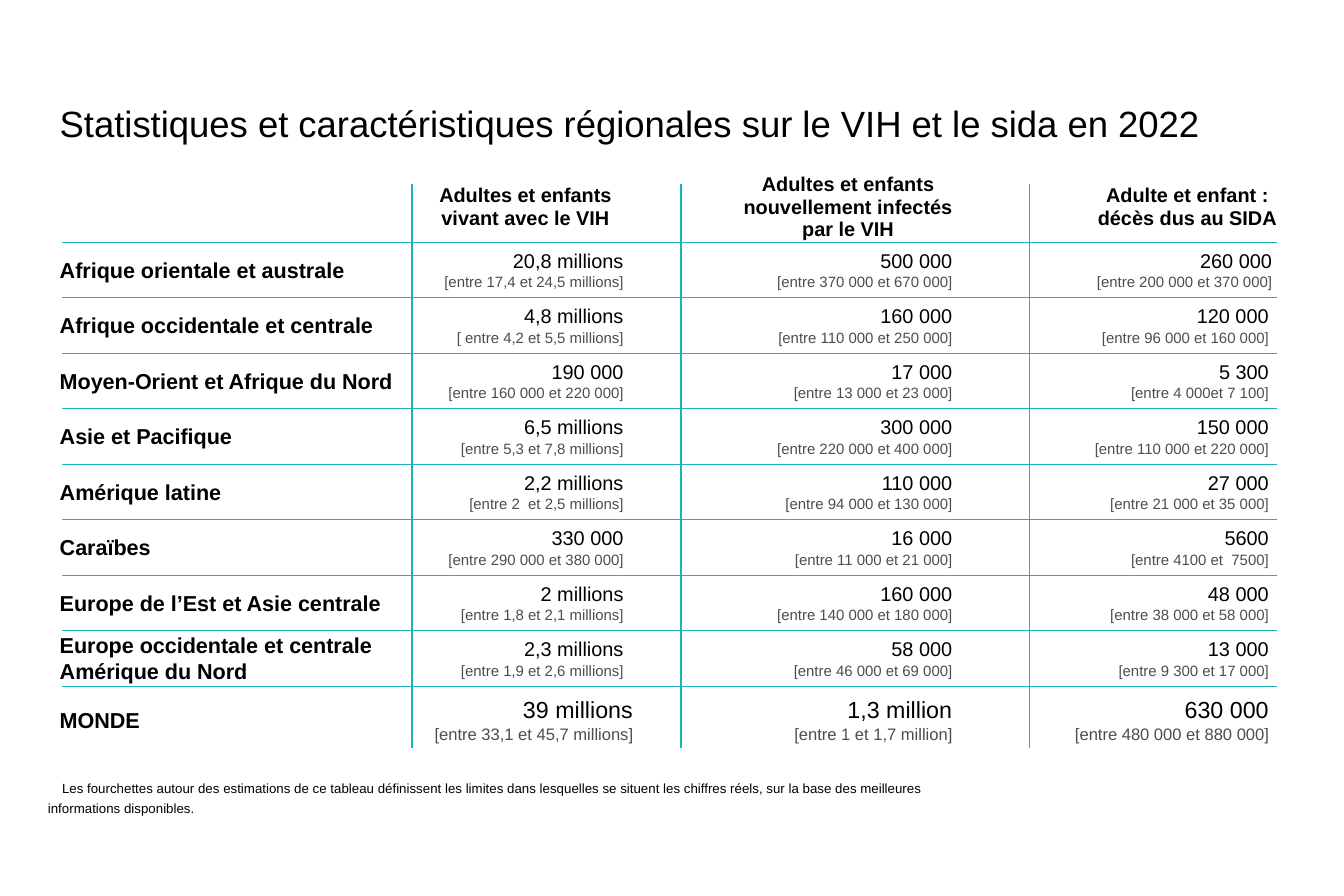
import pptx
import pptx.util
import pptx.dml.color
import pptx.enum.shapes
import pptx.enum.text
import pptx.oxml.ns
import lxml.etree

Cm, Pt = pptx.util.Cm, pptx.util.Pt
qn = pptx.oxml.ns.qn
ALIGN = pptx.enum.text.PP_ALIGN
MIDDLE = pptx.enum.text.MSO_ANCHOR.MIDDLE
STRAIGHT = pptx.enum.shapes.MSO_CONNECTOR.STRAIGHT
NO_STYLE = "{2D5ABB26-0587-4C30-8999-92F81FD0307C}"

TABLE_LEFT, TABLE_TOP = 1.27, 3.64
COLUMN_WIDTHS = [7.49, 5.72, 7.42, 5.4]
HEADER_HEIGHT, REGION_HEIGHT, WORLD_HEIGHT = 1.51, 1.18, 1.3
RULE_LEFT, RULE_RIGHT = 1.32, 27.15
RULE_TOP, RULE_BOTTOM = 3.91, 15.9
HEADER_MARGINS = [(0, 0), (0.13, 1.02), (1.14, 1.45), (1.3, 0)]
FIGURE_MARGINS = [1.22, 1.65, 0.32]
FIRST_MARGINS = [1.22, 1.65, 0.25]
WORLD_MARGINS = [1.02, 1.65, 0.32]

HEADERS = [
    "",
    "Adultes et enfants vivant avec le VIH",
    "Adultes et enfants nouvellement infectés par le VIH",
    "Adulte et enfant :\ndécès dus au SIDA",
]
REGIONS = [
    ("Afrique orientale et australe",
     "20,8 millions\n[entre 17,4 et 24,5 millions]",
     "500 000\n[entre 370 000 et 670 000]",
     "260 000\n[entre 200 000 et 370 000]"),
    ("Afrique occidentale et centrale",
     "4,8 millions\n[ entre 4,2 et 5,5 millions]",
     "160 000\n[entre 110 000 et 250 000]",
     "120 000\n[entre 96 000 et 160 000]"),
    ("Moyen-Orient et Afrique du Nord",
     "190 000\n[entre 160 000 et 220 000]",
     "17 000\n[entre 13 000 et 23 000]",
     "5 300\n[entre 4 000et 7 100]"),
    ("Asie et Pacifique",
     "6,5 millions\n[entre 5,3 et 7,8 millions]",
     "300 000\n[entre 220 000 et 400 000]",
     "150 000\n[entre 110 000 et 220 000]"),
    ("Amérique latine",
     "2,2 millions\n[entre 2  et 2,5 millions]",
     "110 000\n[entre 94 000 et 130 000]",
     "27 000\n[entre 21 000 et 35 000]"),
    ("Caraïbes",
     "330 000\n[entre 290 000 et 380 000]",
     "16 000\n[entre 11 000 et 21 000]",
     "5600\n[entre 4100 et  7500]"),
    ("Europe de l’Est et Asie centrale",
     "2 millions\n[entre 1,8 et 2,1 millions]",
     "160 000\n[entre 140 000 et 180 000]",
     "48 000\n[entre 38 000 et 58 000]"),
    ("Europe occidentale et centrale\nAmérique du Nord",
     "2,3 millions\n[entre 1,9 et 2,6 millions]",
     "58 000\n[entre 46 000 et 69 000]",
     "13 000\n[entre 9 300 et 17 000]"),
]
WORLD = ("MONDE",
         "39 millions\n[entre 33,1 et 45,7 millions]",
         "1,3 million\n[entre 1 et 1,7 million]",
         "630 000\n[entre 480 000 et 880 000]")


def rgb(value):
    return pptx.dml.color.RGBColor.from_string(value)


class StatSlide:
    font = "Arial"
    ink = "000000"
    muted = "4D4D4D"
    rule = "1CB2BB"

    def __init__(self, prs):
        self.slide = prs.slides.add_slide(prs.slide_layouts[6])

    def format(self, p, size, color=None, bold=False, align=ALIGN.LEFT):
        p.alignment = align
        for r in p.runs:
            r.font.name = self.font
            r.font.size = Pt(size)
            r.font.bold = bold
            r.font.color.rgb = rgb(color or self.ink)

    def text(self, text, left, top, width, height, size, inset=None):
        """Add a wrapped text box and return its paragraph."""
        sp = self.slide.shapes.add_textbox(Cm(left), Cm(top), Cm(width), Cm(height))
        tf = sp.text_frame
        tf.word_wrap = True
        if inset is not None:
            tf.margin_left = tf.margin_right = Cm(inset)
            tf.margin_top = tf.margin_bottom = Cm(inset)
        tf.text = text
        self.format(tf.paragraphs[0], size)
        return tf.paragraphs[0]

    def line(self, x1, y1, x2, y2):
        sp = self.slide.shapes.add_connector(STRAIGHT, Cm(x1), Cm(y1), Cm(x2), Cm(y2))
        sp.line.color.rgb = rgb(self.rule)
        sp.line.width = Pt(0.75)
        lxml.etree.SubElement(sp._element.spPr, qn("a:effectLst"))

    def table(self, left, top, widths, heights):
        """Add a table without fills or borders."""
        frame = self.slide.shapes.add_table(
            len(heights), len(widths), Cm(left), Cm(top), Cm(sum(widths)), Cm(sum(heights)))
        table = frame.table
        table.first_row = table.horz_banding = False
        table._tbl.tblPr.find(qn("a:tableStyleId")).text = NO_STYLE
        for column, width in zip(table.columns, widths):
            column.width = Cm(width)
        for row, height in zip(table.rows, heights):
            row.height = Cm(height)
        return table

    def cell(self, cell, text, margins, top=0):
        cell.fill.background()
        cell.margin_left, cell.margin_right = (Cm(m) for m in margins)
        cell.margin_top, cell.margin_bottom = Cm(top), 0
        cell.vertical_anchor = MIDDLE
        cell.text_frame.text = text
        return cell.text_frame.paragraphs

    def header_row(self, table, headers):
        for j, (header, margins) in enumerate(zip(headers, HEADER_MARGINS)):
            for p in self.cell(table.cell(0, j), header, margins):
                self.format(p, 12, bold=True, align=ALIGN.CENTER)

    def data_row(self, table, row, values, margins, figure_size=12, range_size=9, top=0):
        label = self.cell(table.cell(row, 0), values[0], (0, 0), top)
        for p in label:
            self.format(p, 13, bold=True)
        for p in label[1:]:
            p.space_before = Pt(1.2)
        for j, (value, margin) in enumerate(zip(values[1:], margins), 1):
            figure, interval = self.cell(table.cell(row, j), value, (0, margin), top)
            self.format(figure, figure_size, align=ALIGN.RIGHT)
            self.format(interval, range_size, self.muted, align=ALIGN.RIGHT)
            interval.space_before = Pt(1.2)


def main():
    prs = pptx.Presentation()
    prs.slide_width, prs.slide_height = Cm(28.58), Cm(19.05)
    s = StatSlide(prs)

    s.text("Statistiques et caractéristiques régionales sur le VIH et le sida en 2022",
           1.02, 2.03, 27.3, 1.22, 22)

    heights = [HEADER_HEIGHT] + [REGION_HEIGHT] * len(REGIONS) + [WORLD_HEIGHT]
    table = s.table(TABLE_LEFT, TABLE_TOP, COLUMN_WIDTHS, heights)
    s.header_row(table, HEADERS)
    for i, region in enumerate(REGIONS, 1):
        s.data_row(table, i, region, FIRST_MARGINS if i == 1 else FIGURE_MARGINS)
    s.data_row(table, len(REGIONS) + 1, WORLD, WORLD_MARGINS, 14, 10, top=0.15)

    for i in range(1, len(heights)):
        y = TABLE_TOP + sum(heights[:i])
        s.line(RULE_LEFT, y, RULE_RIGHT, y)
    for j in range(1, len(COLUMN_WIDTHS)):
        x = TABLE_LEFT + sum(COLUMN_WIDTHS[:j])
        s.line(x, RULE_TOP, x, RULE_BOTTOM)

    p = s.text("Les fourchettes autour des estimations de ce tableau définissent les limites "
               "dans lesquelles se situent les chiffres réels, sur la base des meilleures "
               "informations disponibles.", 1.02, 16.51, 19.66, 0.43, 8, inset=0)
    p.line_spacing = 1.25
    p._p.get_or_add_pPr().set("indent", str(Cm(0.3)))

    prs.save("out.pptx")


if __name__ == "__main__":
    main()
